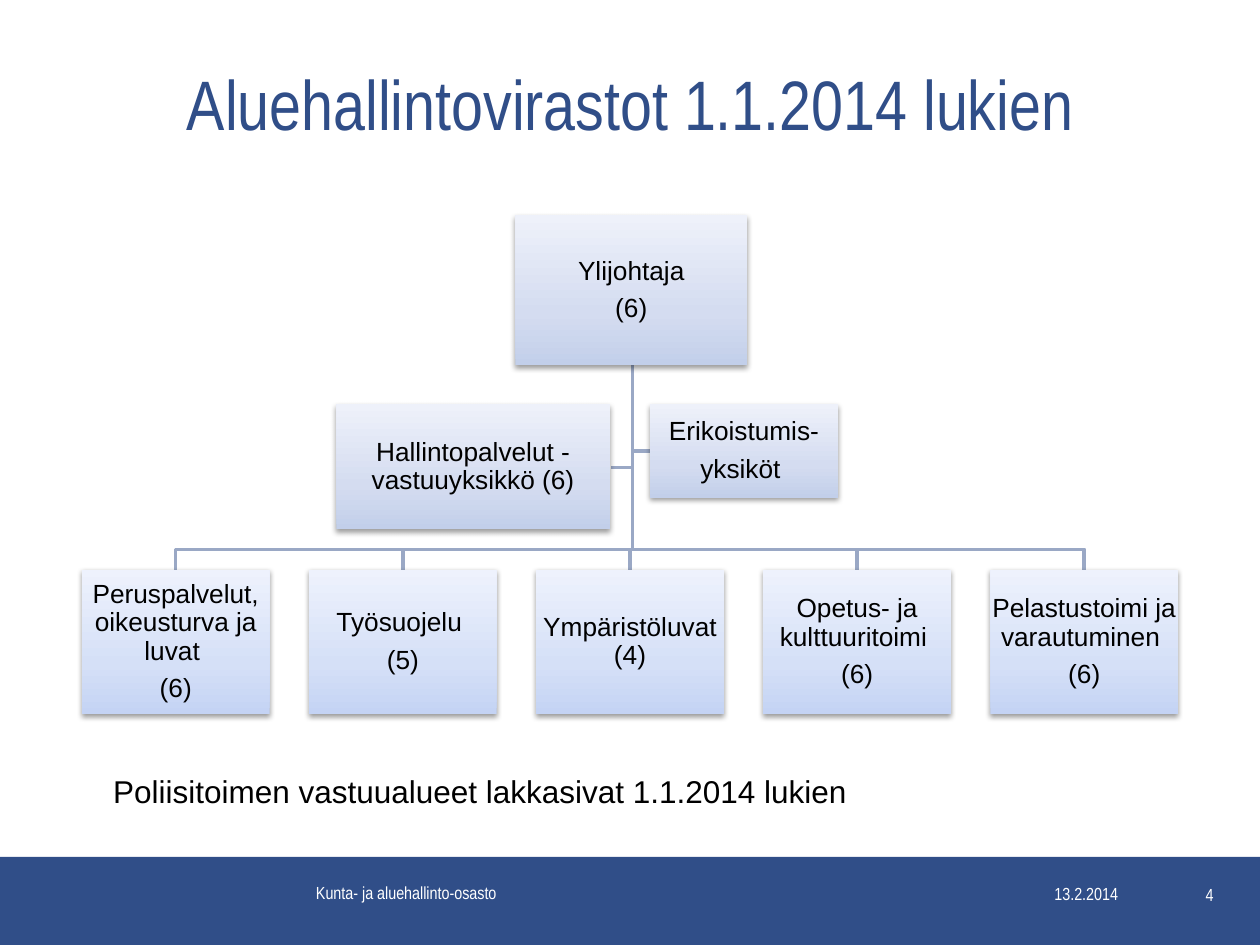
import copy

import lxml.etree
import pptx
import pptx.dml.color
import pptx.enum.shapes
import pptx.enum.text
import pptx.oxml.ns
import pptx.util
from pptx.util import Inches

NAVY = "304E88"
WHITE = "FFFFFF"
BLACK = "000000"
LINE = "9AA8C5"
STAFF_GRADIENT = [(0, "C2CFEA"), (0.35, "D4DCF0"), (1, "EEF1FA")]
UNIT_GRADIENT = [(0, "C4D3F4"), (0.35, "D5E0F7"), (1, "EEF2FD")]
ALIGN = pptx.enum.text.PP_ALIGN
ANCHOR = pptx.enum.text.MSO_ANCHOR

TRUNK_X, TRUNK_TOP, BUS_Y = 5.02, 2.9, 4.36
UNIT_LEFT, UNIT_TOP, UNIT_WIDTH, UNIT_HEIGHT = 0.65, 4.52, 1.49, 1.15
ROW_WIDTH = 8.7
UNITS = [
    ["Peruspalvelut, oikeusturva ja luvat ", "(6)"],
    ["Työsuojelu ", "(5)"],
    ["Ympäristöluvat (4)"],
    ["Opetus- ja kulttuuritoimi ", "(6)"],
    ["Pelastustoimi ja varautuminen ", "(6)"],
]


def color(value):
    """Turn a hex string into a colour."""
    return pptx.dml.color.RGBColor.from_string(value)


def add_run(paragraph, text, size, font, value):
    """Add one formatted run to a paragraph."""
    run = paragraph.add_run()
    run.text = text
    run.font.size = pptx.util.Pt(size)
    run.font.name = font
    run.font.color.rgb = color(value)


def add_label(slide, box, text, size, font, value, align=ALIGN.LEFT, anchor=ANCHOR.MIDDLE):
    """Add a text box with one line of text."""
    shape = slide.shapes.add_textbox(*map(Inches, box))
    frame = shape.text_frame
    frame.word_wrap = True
    frame.vertical_anchor = anchor
    paragraph = frame.paragraphs[0]
    paragraph.alignment = align
    add_run(paragraph, text, size, font, value)


def add_shadow(shape):
    """Give a shape a soft shadow below it."""
    shape.shadow.inherit = False
    effects = shape._element.spPr.find(pptx.oxml.ns.qn("a:effectLst"))
    shadow = lxml.etree.SubElement(
        effects, pptx.oxml.ns.qn("a:outerShdw"),
        blurRad="40000", dist="20000", dir="5400000", rotWithShape="0")
    shade = lxml.etree.SubElement(shadow, pptx.oxml.ns.qn("a:srgbClr"), val=BLACK)
    lxml.etree.SubElement(shade, pptx.oxml.ns.qn("a:alpha"), val="38000")


def fill_gradient(shape, stops):
    """Fill a shape with a three-stop gradient rising from its bottom."""
    shape.fill.gradient()
    shape.fill.gradient_angle = 90
    first = shape.fill._xPr.find(".//" + pptx.oxml.ns.qn("a:gs"))
    first.addnext(copy.deepcopy(first))
    for stop, (position, value) in zip(shape.fill.gradient_stops, stops):
        stop.position = position
        stop.color.rgb = color(value)


def add_box(slide, box, lines, stops):
    """Add an organisation box with centred paragraphs."""
    shape = slide.shapes.add_shape(
        pptx.enum.shapes.MSO_SHAPE.RECTANGLE, *map(Inches, box))
    fill_gradient(shape, stops)
    shape.line.fill.background()
    add_shadow(shape)
    frame = shape.text_frame
    frame.word_wrap = True
    frame.vertical_anchor = ANCHOR.MIDDLE
    frame.margin_left = frame.margin_right = Inches(0.01)
    frame.margin_top = frame.margin_bottom = Inches(0.01)
    for index, line in enumerate(lines):
        paragraph = frame.add_paragraph() if index else frame.paragraphs[0]
        paragraph.alignment = ALIGN.CENTER
        paragraph.line_spacing = 0.9
        paragraph.space_after = pptx.util.Pt(5)
        add_run(paragraph, line, 15, "Arial", BLACK)


def add_branch(slide, *points):
    """Draw an open elbow line from the trunk top through the points."""
    builder = slide.shapes.build_freeform(Inches(TRUNK_X), Inches(TRUNK_TOP))
    builder.add_line_segments(
        [(Inches(x), Inches(y)) for x, y in points], close=False)
    shape = builder.convert_to_shape()
    shape.fill.background()
    shape.line.color.rgb = color(LINE)
    shape.line.width = pptx.util.Pt(2)
    shape.shadow.inherit = False


def add_chart_tree(slide):
    """Draw the branches and boxes of the organisation."""
    step = (ROW_WIDTH - UNIT_WIDTH) / (len(UNITS) - 1)
    lefts = [UNIT_LEFT + index * step for index in range(len(UNITS))]
    for x, y in [(5.16, 3.58), (4.85, 3.71)]:
        add_branch(slide, (TRUNK_X, y), (x, y))
    for left in lefts:
        center = left + UNIT_WIDTH / 2
        add_branch(slide, (TRUNK_X, BUS_Y), (center, BUS_Y), (center, UNIT_TOP))
    add_box(slide, (4.09, 1.71, 1.84, 1.19), ["Ylijohtaja", "(6)"], STAFF_GRADIENT)
    for left, lines in zip(lefts, UNITS):
        add_box(slide, (left, UNIT_TOP, UNIT_WIDTH, UNIT_HEIGHT), lines, UNIT_GRADIENT)
    add_box(slide, (2.67, 3.21, 2.17, 0.99),
            ["Hallintopalvelut - vastuuyksikkö (6)"], STAFF_GRADIENT)
    add_box(slide, (5.16, 3.21, 1.49, 0.74), ["Erikoistumis-", "yksiköt "], STAFF_GRADIENT)


def add_footer(slide):
    """Add the footer band and its texts."""
    band = slide.shapes.add_shape(
        pptx.enum.shapes.MSO_SHAPE.RECTANGLE, 0, Inches(6.8), Inches(10), Inches(0.7))
    band.fill.solid()
    band.fill.fore_color.rgb = color(NAVY)
    band.line.fill.background()
    band.shadow.inherit = False
    style = (10, "Arial Narrow", WHITE)
    add_label(slide, (8.27, 6.97, 0.93, 0.24), "13.2.2014", *style)
    add_label(slide, (9.2, 6.97, 0.53, 0.23), "4", *style, ALIGN.RIGHT, ANCHOR.TOP)
    add_label(slide, (2.41, 6.88, 3.17, 0.4), "Kunta- ja aluehallinto-osasto", *style)


def main():
    """Build and save the slide."""
    presentation = pptx.Presentation()
    presentation.slide_width = Inches(10)
    presentation.slide_height = Inches(7.5)
    slide = presentation.slides.add_slide(presentation.slide_layouts[6])
    add_footer(slide)
    add_label(slide, (0.65, 0.26, 8.7, 1.1), "Aluehallintovirastot 1.1.2014 lukien",
              40, "Arial Narrow", NAVY, ALIGN.CENTER)
    add_chart_tree(slide)
    add_label(slide, (0.8, 6.08, 6.33, 0.4),
              "Poliisitoimen vastuualueet lakkasivat 1.1.2014 lukien",
              18, "Arial", BLACK, anchor=ANCHOR.TOP)
    presentation.save("out.pptx")


if __name__ == "__main__":
    main()
